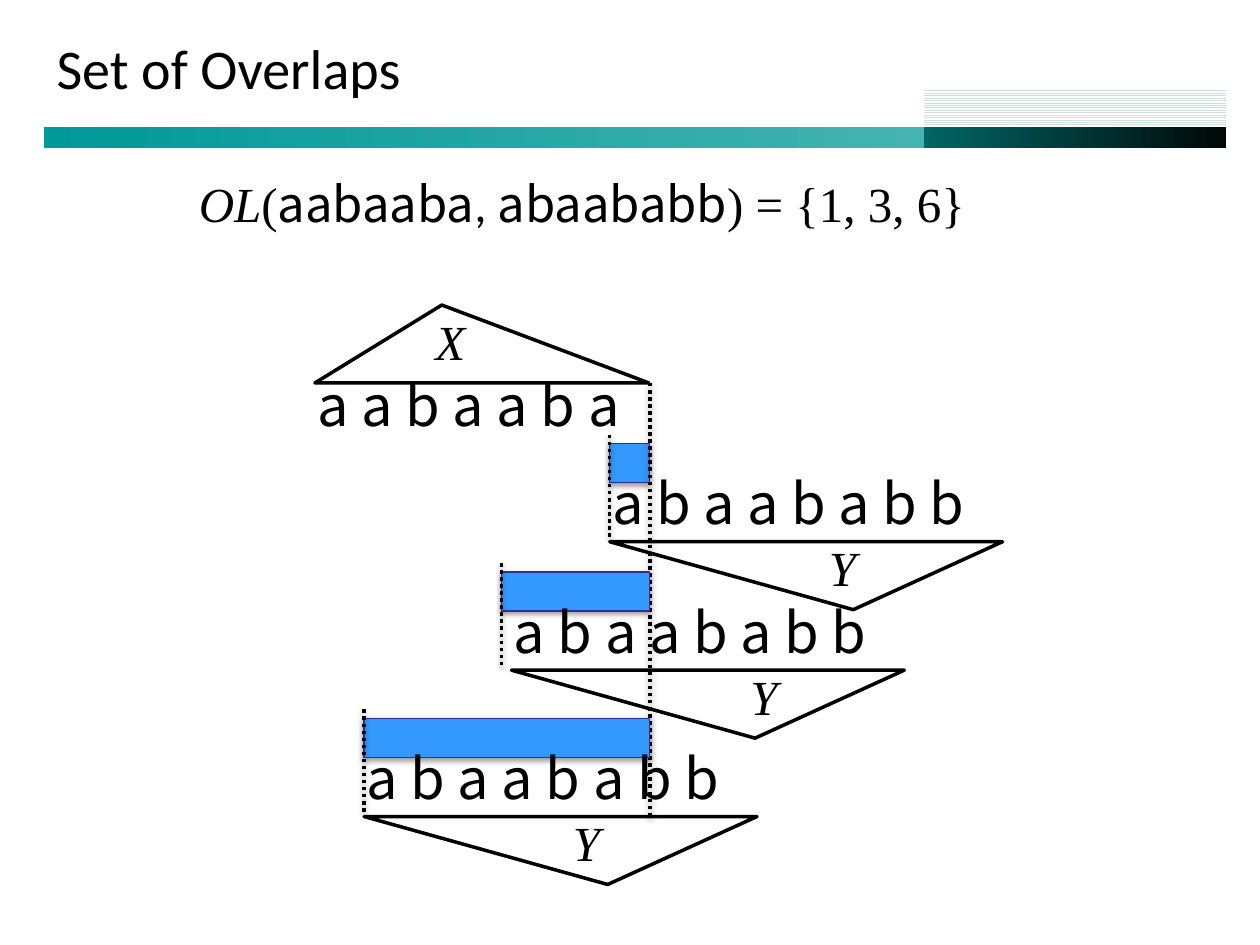
"""Build the slide "Set of Overlaps": a string pair and its three overlaps."""
from pptx import Presentation
from pptx.dml.color import RGBColor
from pptx.enum.dml import MSO_LINE, MSO_PATTERN
from pptx.enum.shapes import MSO_CONNECTOR, MSO_SHAPE as SHAPE
from pptx.enum.text import MSO_ANCHOR as ANCHOR
from pptx.oxml import parse_xml
from pptx.oxml.ns import nsdecls
from pptx.util import Cm, Pt

COLORS = {"text": "000000", "teal": "009999", "light": "45B3B3",
          "dark": "006666", "black": "000808", "stripe": "CDDFD6",
          "white": "FFFFFF", "blue": "3399FF", "edge": "2F2F98"}
SERIF, SANS, MONO = "Times New Roman", "Calibri", "Noto Sans CJK KR"
SHADOW = ('<a:outerShdw blurRad="40000" dist="20000" dir="5400000" rotWithShape="0">'
          '<a:srgbClr val="000000"><a:alpha val="38000"/></a:srgbClr></a:outerShdw>')

prs = Presentation()
prs.slide_width, prs.slide_height = Cm(25.4), Cm(19.05)
s = prs.slides.add_slide(prs.slide_layouts[6])


def rgb(name):
    return RGBColor.from_string(COLORS[name])


def write(text, x, y, w, h, size=32, font=MONO, italic=False, anchor=ANCHOR.TOP):
    """Add a text box; text is a string or a list of (text, font, italic)."""
    tf = s.shapes.add_textbox(Cm(x), Cm(y), Cm(w), Cm(h)).text_frame
    tf.word_wrap = True
    tf.vertical_anchor = anchor
    p = tf.paragraphs[0]
    for part, face, slant in [(text, font, italic)] if isinstance(text, str) else text:
        r = p.add_run()
        r.text = part
        r.font.name, r.font.size, r.font.italic = face, Pt(size), slant
        r.font.color.rgb = rgb("text")


def outline(sp, color="text", width=2, dash=None, shadow=""):
    """Set the line and the shadow of a shape or a connector."""
    sp.line.color.rgb = rgb(color)
    sp.line.width = Pt(width)
    sp.line.dash_style = dash
    sp._element.spPr.append(
        parse_xml(f'<a:effectLst {nsdecls("a")}>{shadow}</a:effectLst>'))


for x, y, w, h, first, last in [(0.89, 2.57, 17.73, 0.41, "teal", "light"),
                                (18.62, 1.78, 6.1, 0.76, "stripe", "white"),
                                (18.62, 2.57, 6.1, 0.41, "dark", "black")]:
    sp = s.shapes.add_shape(SHAPE.RECTANGLE, Cm(x), Cm(y), Cm(w), Cm(h))
    sp.shadow.inherit = False
    sp.line.fill.background()
    if first == "stripe":
        sp.fill.patterned()
        sp.fill.pattern = MSO_PATTERN.NARROW_HORIZONTAL
        sp.fill.fore_color.rgb, sp.fill.back_color.rgb = rgb(first), rgb(last)
    else:
        sp.fill.gradient()
        sp.fill.gradient_angle = 0
        for stop, name in zip(sp.fill.gradient_stops, (first, last)):
            stop.color.rgb = rgb(name)

write("Set of Overlaps", 0.89, 0.33, 23.83, 2.06, font=SANS, anchor=ANCHOR.MIDDLE)
write([("OL", SERIF, True), ("(", SERIF, False), ("aabaaba", MONO, False),
       (", ", SANS, False), ("abaababb", MONO, False),
       (") = {1, 3, 6}", SERIF, False)], 3.76, 3.38, 16.38, 1.78, size=28)

x_end, x_base = 13.1, 7.72
rows = [(12.29, 12.29, 10.92, 16.46), (10.11, 10.31, 13.51, 14.88),
        (7.34, 7.34, 16.46, 11.3)]
triangles = [(6.35, 6.15, 6.73, 1.57, 0)]
triangles += [(left, top, 7.92, 1.37, 180) for _, left, top, _ in rows]
for x, y, w, h, angle in triangles:
    sp = s.shapes.add_shape(SHAPE.ISOSCELES_TRIANGLE, Cm(x), Cm(y), Cm(w), Cm(h))
    sp.adjustments[0] = 0.38
    sp.rotation = angle
    sp.fill.background()
    outline(sp)

write("a a b a a b a", 6.15, 7.34, 8.33, 1.63)
write("X", 8.53, 6.15, 1.4, 1.45, size=28, font=SERIF, italic=True)

for start, left, top, label in rows:
    guides = [(start, top - 0.1, start, top - 2.18)]
    if start == rows[0][0]:
        guides.append((x_end, x_base, x_end, 16.46))
    bar = s.shapes.add_shape(SHAPE.RECTANGLE, Cm(start), Cm(top - 1.98),
                             Cm(x_end - start), Cm(0.79))
    bar.fill.solid()
    bar.fill.fore_color.rgb = rgb("blue")
    outline(bar, "edge", 0.75, shadow=SHADOW)
    for ends in guides:
        line = s.shapes.add_connector(MSO_CONNECTOR.STRAIGHT, *map(Cm, ends))
        outline(line, dash=MSO_LINE.ROUND_DOT, shadow=SHADOW)
    write("a b a a b a b b", left - 0.2, top - 1.59, 8.74, 1.63)
    write("Y", label, top - 0.2, 1.6, 1.45, size=28, font=SERIF, italic=True)

prs.save("out.pptx")
